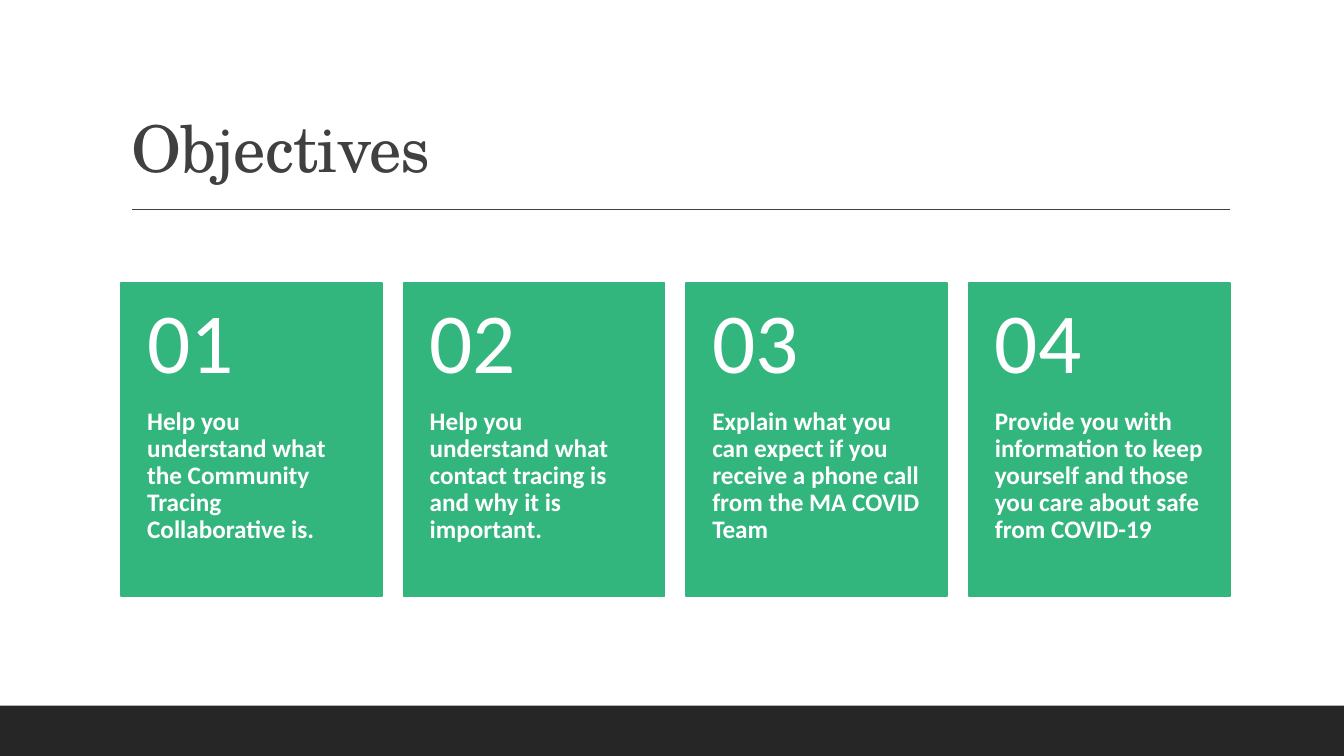
from pptx import Presentation
from pptx.dml.color import RGBColor
from pptx.enum import shapes, text
from pptx.util import Pt

TITLE = "Objectives"
OBJECTIVES = [
    "Help you understand what the Community Tracing Collaborative is.",
    "Help you understand what contact tracing is and why it is important.",
    "Explain what you can expect if you receive a phone call from the MA COVID Team",
    "Provide you with information to keep yourself and those you care about safe from COVID-19",
]
COLORS = {"white": "FFFFFF", "green": "33B67D", "gray": "404040", "dark": "262626"}

# Lengths in points
SLIDE_W, SLIDE_H, FOOTER_H = 960, 540, 36
LEFT, SPAN, CARD_W = 86.4, 792, 186.5
CARD_TOP, CARD_H, NUMBER_H = 202, 224, 89.6
PITCH = (SPAN - CARD_W) / (len(OBJECTIVES) - 1)

TITLE_FONT = {"name": "TeX Gyre Schola", "size": Pt(46), "bold": False}
NUMBER_FONT = {"name": "Calibri", "size": Pt(61), "bold": False}
BODY_FONT = {"name": "Calibri", "size": Pt(18), "bold": True}


def color(name):
    return RGBColor.from_string(COLORS[name])


def place(sp, *box):
    for side, value in zip(("left", "top", "width", "height"), box):
        setattr(sp, side, Pt(value))


def add_rect(s, fill, line_width, *box):
    sp = s.shapes.add_shape(shapes.MSO_SHAPE.RECTANGLE, *map(Pt, box))
    sp.shadow.inherit = False
    sp.fill.solid()
    sp.fill.fore_color.rgb = color(fill)
    if line_width:
        sp.line.color.rgb = color(fill)
        sp.line.width = Pt(line_width)
    else:
        sp.line.fill.background()


def write(sp, words, font, ink, anchor, margins):
    tf = sp.text_frame
    tf.word_wrap = True
    tf.auto_size = text.MSO_AUTO_SIZE.NONE
    tf.vertical_anchor = anchor
    for side, value in zip(("left", "top", "right", "bottom"), margins):
        setattr(tf, "margin_" + side, Pt(value))
    p = tf.paragraphs[0]
    p.alignment = text.PP_ALIGN.LEFT
    p.line_spacing = 0.9
    r = p.add_run()
    r.text = words
    for key, value in font.items():
        setattr(r.font, key, value)
    r.font.color.rgb = color(ink)
    return r


def main():
    prs = Presentation()
    prs.slide_width, prs.slide_height = Pt(SLIDE_W), Pt(SLIDE_H)
    s = prs.slides.add_slide(prs.slide_layouts[5])
    s.background.fill.solid()
    s.background.fill.fore_color.rgb = color("white")

    # Title and rule
    title = s.shapes.title
    place(title, LEFT, 22.6, SPAN, 114.2)
    r = write(title, TITLE, TITLE_FONT, "gray", text.MSO_ANCHOR.BOTTOM, (7.2, 3.6, 7.2, 3.6))
    r.font._element.set("spc", "-50")
    rule = s.shapes.add_connector(
        shapes.MSO_CONNECTOR.STRAIGHT, Pt(94.5), Pt(149.5), Pt(878.8), Pt(149.5))
    rule.line.color.rgb = color("gray")
    rule.line.width = Pt(1)
    rule._element.spPr.add_effectLst = None
    rule._element.spPr.append(
        rule._element.spPr.makeelement(
            "{http://schemas.openxmlformats.org/drawingml/2006/main}effectLst", {}))

    # Footer band
    add_rect(s, "dark", 0, 0, SLIDE_H - FOOTER_H, SLIDE_W, FOOTER_H)

    # Numbered cards
    for i, objective in enumerate(OBJECTIVES):
        x = LEFT + i * PITCH
        add_rect(s, "green", 1.25, x, CARD_TOP, CARD_W, CARD_H)
        parts = [
            (objective, BODY_FONT, text.MSO_ANCHOR.TOP, CARD_TOP + NUMBER_H,
             CARD_H - NUMBER_H, (18.7, 0, 18.7, 26)),
            (f"{i + 1:02}", NUMBER_FONT, text.MSO_ANCHOR.MIDDLE, CARD_TOP,
             NUMBER_H, (18.7, 13, 18.7, 13)),
        ]
        for words, font, anchor, top, height, margins in parts:
            sp = s.shapes.add_textbox(Pt(x), Pt(top), Pt(CARD_W), Pt(height))
            write(sp, words, font, "white", anchor, margins)

    prs.save("out.pptx")


if __name__ == "__main__":
    main()
